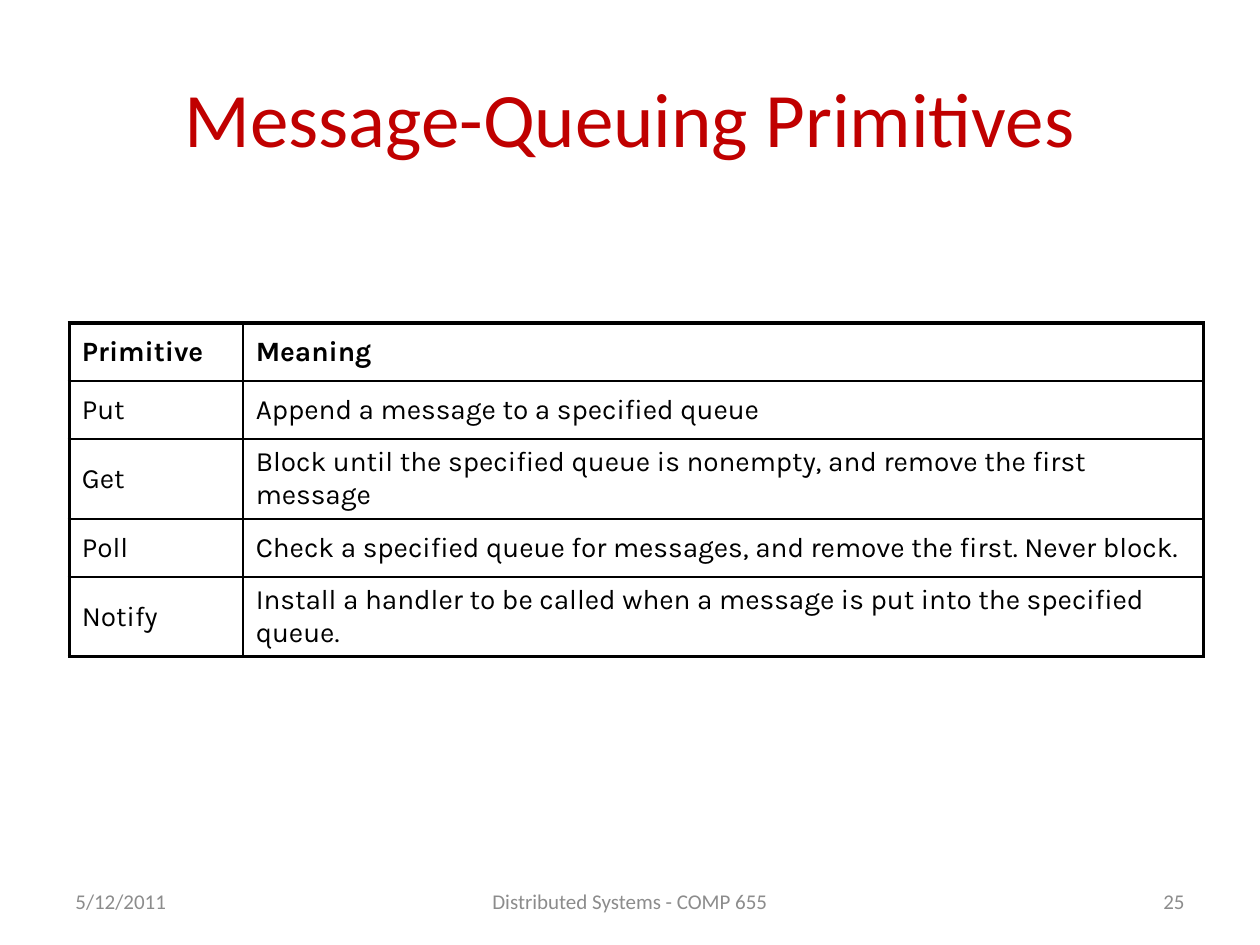
from typing import NamedTuple

from lxml import etree
from pptx import Presentation
from pptx import util as u
from pptx.dml.color import RGBColor
from pptx.enum import text
from pptx.oxml import ns

COLOURS = {"title": "C00000", "footer": "8C8C8C", "ink": "000000", "paper": "FFFFFF"}
THICK, THIN = 2.25, 1
ROW_HEIGHT = 33.2
COLUMN_WIDTHS = (99.36, 548.64)


class Label(NamedTuple):
    content: str
    left: float
    top: float
    width: float
    height: float
    size: float
    colour: str
    align: text.PP_ALIGN


class Primitive(NamedTuple):
    name: str
    meaning: str


LABELS = [
    Label("5/12/2011", 36, 500.5, 168, 28.75, 12, "footer", text.PP_ALIGN.LEFT),
    Label("Distributed Systems - COMP 655", 246, 500.5, 228, 28.75, 12, "footer", text.PP_ALIGN.CENTER),
    Label("25", 516, 500.5, 168, 28.75, 12, "footer", text.PP_ALIGN.RIGHT),
    Label("Message-Queuing Primitives", 36, 21.6, 648, 90, 44, "title", text.PP_ALIGN.CENTER),
]

PRIMITIVES = [
    Primitive("Primitive", "Meaning"),
    Primitive("Put", "Append a message to a specified queue"),
    Primitive("Get", "Block until the specified queue is nonempty, and remove the first message"),
    Primitive("Poll", "Check a specified queue for messages, and remove the first. Never block."),
    Primitive("Notify", "Install a handler to be called when a message is put into the specified queue."),
]


def write_text(frame, content: str, *, size: float, colour: str, font: str = "Calibri",
               bold: bool = False, align: text.PP_ALIGN = text.PP_ALIGN.LEFT) -> None:
    paragraph = frame.paragraphs[0]
    paragraph.alignment = align
    run = paragraph.add_run()
    run.text = content
    run.font.name = font
    run.font.size = u.Pt(size)
    run.font.bold = bold
    run.font.color.rgb = RGBColor.from_string(COLOURS[colour])


def draw_label(slide, label: Label) -> None:
    box = slide.shapes.add_textbox(*map(u.Pt, (label.left, label.top, label.width, label.height)))
    frame = box.text_frame
    frame.word_wrap = True
    frame.vertical_anchor = text.MSO_ANCHOR.MIDDLE
    write_text(frame, label.content, size=label.size, colour=label.colour, align=label.align)


def set_borders(cell, widths: dict[str, float]) -> None:
    properties = cell._tc.get_or_add_tcPr()
    for position, (side, width) in enumerate(widths.items()):
        line = etree.Element(ns.qn(f"a:ln{side}"), w=str(u.Pt(width)))
        fill = etree.SubElement(line, ns.qn("a:solidFill"))
        etree.SubElement(fill, ns.qn("a:srgbClr"), val=COLOURS["ink"])
        properties.insert(position, line)


def draw_primitives(slide, primitives: list[Primitive], left: float, top: float) -> None:
    last_row, last_column = len(primitives) - 1, len(COLUMN_WIDTHS) - 1
    table = slide.shapes.add_table(
        len(primitives), len(COLUMN_WIDTHS), u.Pt(left), u.Pt(top),
        u.Pt(sum(COLUMN_WIDTHS)), u.Pt(ROW_HEIGHT * len(primitives))).table
    for column, width in zip(table.columns, COLUMN_WIDTHS):
        column.width = u.Pt(width)
    for r, primitive in enumerate(primitives):
        table.rows[r].height = u.Pt(ROW_HEIGHT)
        for c, content in enumerate(primitive):
            cell = table.cell(r, c)
            cell.vertical_anchor = text.MSO_ANCHOR.MIDDLE
            cell.fill.solid()
            cell.fill.fore_color.rgb = RGBColor.from_string(COLOURS["paper"])
            write_text(cell.text_frame, content, size=16, colour="ink", font="Karla", bold=r == 0)
            set_borders(cell, {
                "L": THICK if c == 0 else THIN,
                "R": THICK if c == last_column else THIN,
                "T": THICK if r == 0 else THIN,
                "B": THICK if r == last_row else THIN,
            })


def main() -> None:
    deck = Presentation()
    deck.slide_width, deck.slide_height = u.Pt(720), u.Pt(540)
    slide = deck.slides.add_slide(deck.slide_layouts[6])
    for label in LABELS:
        draw_label(slide, label)
    draw_primitives(slide, PRIMITIVES, left=39.6, top=184.5)
    deck.save("out.pptx")


if __name__ == "__main__":
    main()
